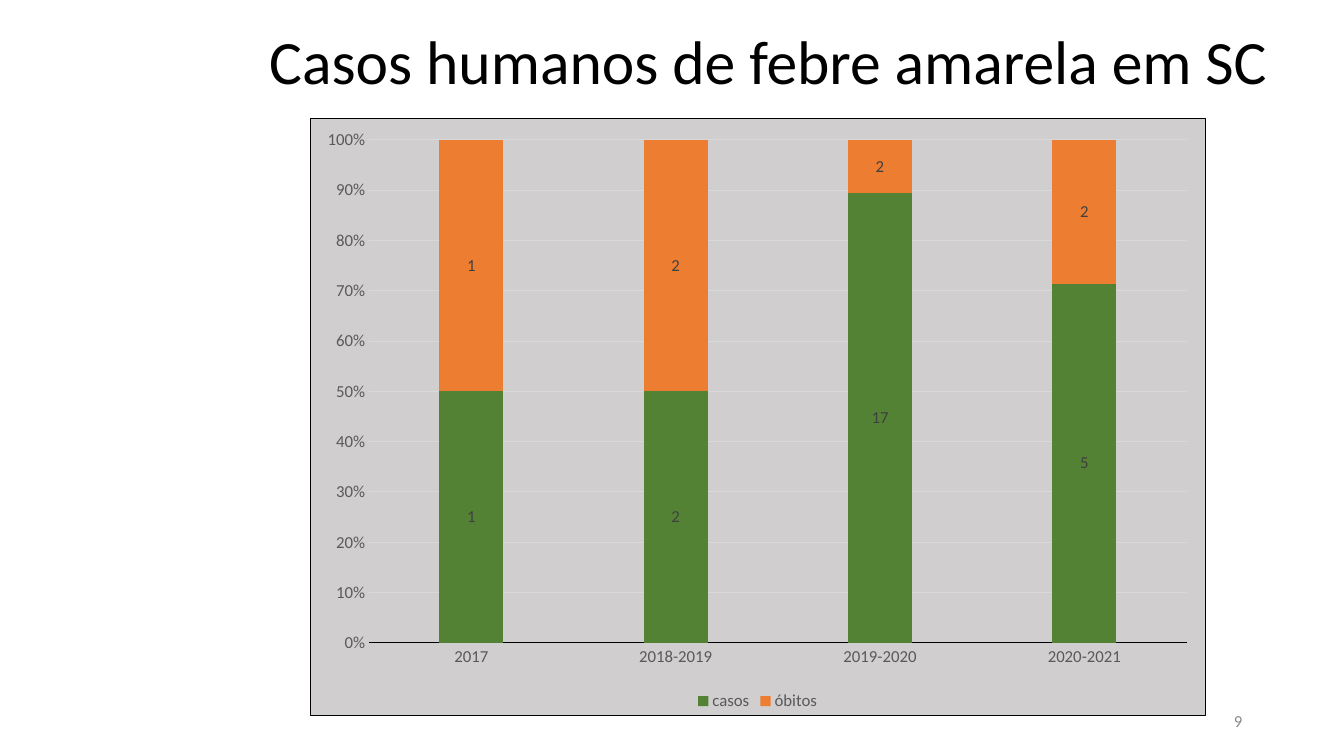
from dataclasses import dataclass

from lxml import etree
from pptx import Presentation
from pptx.chart.data import CategoryChartData
from pptx.dml.color import RGBColor
from pptx.enum.chart import XL_CHART_TYPE, XL_LEGEND_POSITION, XL_TICK_MARK
from pptx.enum.text import MSO_ANCHOR, MSO_AUTO_SIZE, PP_ALIGN
from pptx.oxml import parse_xml
from pptx.oxml.ns import nsdecls, qn
from pptx.util import Inches, Pt

STACKED = XL_CHART_TYPE.COLUMN_STACKED_100
LEGEND_BOTTOM = XL_LEGEND_POSITION.BOTTOM
NO_TICK = XL_TICK_MARK.NONE
MIDDLE = MSO_ANCHOR.MIDDLE
NO_AUTOFIT = MSO_AUTO_SIZE.NONE
LEFT, RIGHT = PP_ALIGN.LEFT, PP_ALIGN.RIGHT


@dataclass(frozen=True)
class Theme:
    font: str = "Calibri"
    title_size: int = 44
    small_size: int = 12
    line_width: float = 0.75
    ink: str = "000000"
    page_number: str = "898989"
    axis_text: str = "595959"
    label_text: str = "404040"
    grid: str = "D9D9D9"
    panel: str = "D0CECE"
    cases: str = "548235"
    deaths: str = "ED7D31"


def format_font(font, theme, size, color):
    font.name = theme.font
    font.size = Pt(size)
    font.color.rgb = RGBColor.from_string(color)


def write_text(box, text, theme, size, color, align=LEFT, line_spacing=1.0):
    frame = box.text_frame
    frame.word_wrap = True
    frame.auto_size = NO_AUTOFIT
    frame.vertical_anchor = MIDDLE
    para = frame.paragraphs[0]
    para.alignment = align
    para.line_spacing = line_spacing
    span = para.add_run()
    span.text = text
    format_font(span.font, theme, size, color)


class SlideBuilder:
    def __init__(self, deck, theme):
        self.theme = theme
        self.page = deck.slides.add_slide(deck.slide_layouts[5])

    def title(self, text, left, top, width, height):
        box = self.page.shapes.title
        box.left, box.top = Inches(left), Inches(top)
        box.width, box.height = Inches(width), Inches(height)
        write_text(box, text, self.theme, self.theme.title_size,
                   self.theme.ink, line_spacing=0.9)

    def page_number(self, text, left, top, width, height):
        box = self.page.shapes.add_textbox(
            Inches(left), Inches(top), Inches(width), Inches(height))
        write_text(box, text, self.theme, self.theme.small_size,
                   self.theme.page_number, align=RIGHT)

    def stacked_chart(self, categories, series, left, top, width, height):
        data = CategoryChartData()
        data.categories = categories
        for name, values, _ in series:
            data.add_series(name, values)
        chart = self.page.shapes.add_chart(
            STACKED, Inches(left), Inches(top), Inches(width),
            Inches(height), data).chart
        chart.has_title = False
        format_font(chart.font, self.theme, 10, self.theme.ink)

        # Columns and their value labels
        plot = chart.plots[0]
        plot.gap_width, plot.overlap = 219, 100
        plot.vary_by_categories = False
        for column, (_, _, color) in zip(plot.series, series):
            column.format.fill.solid()
            column.format.fill.fore_color.rgb = RGBColor.from_string(color)
            column.data_labels.show_value = True
            format_font(column.data_labels.font, self.theme,
                        self.theme.small_size, self.theme.label_text)

        self.axes(chart)
        self.legend(chart)
        self.panel(chart)
        self.plot_area(chart, x=0.066, y=0.036, w=0.913, h=0.843)

    def axes(self, chart):
        for axis in (chart.category_axis, chart.value_axis):
            axis.major_tick_mark = axis.minor_tick_mark = NO_TICK
            format_font(axis.tick_labels.font, self.theme,
                        self.theme.small_size, self.theme.axis_text)
        self.line(chart.category_axis.format.line, self.theme.ink)
        values = chart.value_axis
        values.minimum_scale, values.maximum_scale = 0, 1
        values.major_unit = 0.1
        values.tick_labels.number_format = "0%"
        values.tick_labels.number_format_is_linked = False
        values.format.line.fill.background()
        values.has_major_gridlines = True
        self.line(values.major_gridlines.format.line, self.theme.grid)

    def line(self, line, color):
        line.color.rgb = RGBColor.from_string(color)
        line.width = Pt(self.theme.line_width)

    def legend(self, chart):
        chart.has_legend = True
        chart.legend.position = LEGEND_BOTTOM
        chart.legend.include_in_layout = False
        format_font(chart.legend.font, self.theme,
                    self.theme.small_size, self.theme.axis_text)

    def panel(self, chart):
        """Fill and border of the whole chart."""
        space = chart.element
        space.find(qn("c:chart")).addnext(parse_xml(
            f'<c:spPr {nsdecls("c", "a")}>'
            f'<a:solidFill><a:srgbClr val="{self.theme.panel}"/></a:solidFill>'
            f'<a:ln w="{Pt(self.theme.line_width)}"><a:solidFill>'
            f'<a:srgbClr val="{self.theme.ink}"/></a:solidFill></a:ln>'
            '</c:spPr>'))

    def plot_area(self, chart, **fractions):
        """Place the inner plot by fractions of the chart size."""
        area = chart.element.find(qn("c:chart")).find(qn("c:plotArea"))
        for old in area.findall(qn("c:layout")):
            area.remove(old)
        layout = etree.Element(qn("c:layout"))
        manual = etree.SubElement(layout, qn("c:manualLayout"))
        settings = {"layoutTarget": "inner", "xMode": "edge",
                    "yMode": "edge", **fractions}
        for tag, value in settings.items():
            etree.SubElement(manual, qn(f"c:{tag}")).set("val", str(value))
        area.insert(0, layout)


def main():
    deck = Presentation()
    deck.slide_width, deck.slide_height = Inches(13.33), Inches(7.5)
    theme = Theme()
    slide = SlideBuilder(deck, theme)

    # Heading and page number
    slide.title("Casos humanos de febre amarela em SC", 2.57, 0.44, 10.97, 0.4)
    slide.page_number("9", 9.42, 6.95, 3, 0.4)

    # Cases and deaths by season
    slide.stacked_chart(
        ["2017", "2018-2019", "2019-2020", "2020-2021"],
        [("casos", (1, 2, 17, 5), theme.cases),
         ("óbitos", (1, 2, 2, 2), theme.deaths)],
        3.07, 1.17, 8.89, 5.93)

    deck.save("out.pptx")


if __name__ == "__main__":
    main()
